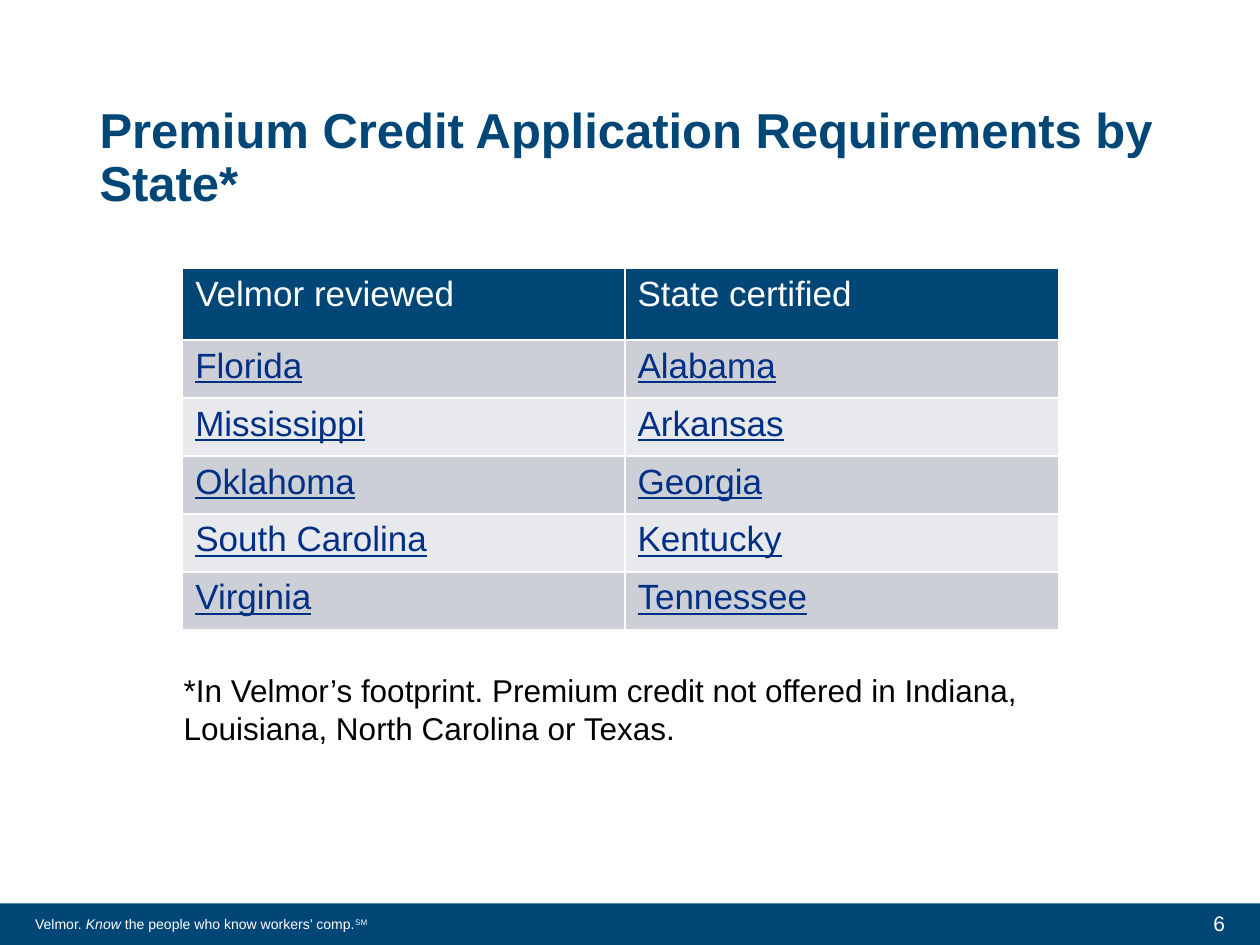
from pptx import Presentation
from pptx.dml.color import RGBColor as Rgb
from pptx.enum.shapes import MSO_SHAPE as Shape
from pptx.enum.text import MSO_ANCHOR as Anchor, PP_ALIGN as Align
from pptx.oxml import parse_xml
from pptx.oxml.ns import nsdecls
from pptx.util import Inches, Pt

HUES = {"navy": "004677", "link": "002F86", "white": "FFFFFF",
        "black": "000000", "dark": "CCCFD6", "light": "E7E9EC"}
ROWS = [("Velmor reviewed", "State certified"),
        ("Florida", "Alabama"),
        ("Mississippi", "Arkansas"),
        ("Oklahoma", "Georgia"),
        ("South Carolina", "Kentucky"),
        ("Virginia", "Tennessee")]


def hue(name):
    return Rgb.from_string(HUES[name])


def style(font, color, **form):
    font.color.rgb = hue(color)
    for key, val in {"name": "Arial", **form}.items():
        setattr(font, key, val)


def add_run(para, text, color, **form):
    run = para.add_run()
    run.text = text
    style(run.font, color, **form)
    return run


def add_box(slide, box, anchor=Anchor.TOP):
    frame = slide.shapes.add_textbox(*map(Inches, box)).text_frame
    frame.word_wrap = True
    frame.vertical_anchor = anchor
    return frame.paragraphs[0]


def add_rules(cell, color, width):
    props = cell._tc.get_or_add_tcPr()
    for num, side in enumerate(("lnL", "lnR", "lnT", "lnB")):
        # Borders must come before the fill
        props.insert(num, parse_xml(
            f'<a:{side} {nsdecls("a")} w="{Pt(width)}"><a:solidFill>'
            f'<a:srgbClr val="{HUES[color]}"/></a:solidFill></a:{side}>'))


def add_title(slide, box, text):
    title = slide.shapes.title
    for key, val in zip(("left", "top", "width", "height"), box):
        setattr(title, key, Inches(val))
    frame = title.text_frame
    frame.word_wrap = True
    frame.vertical_anchor = Anchor.MIDDLE
    para = frame.paragraphs[0]
    para.alignment = Align.LEFT
    para.line_spacing = 0.9
    add_run(para, text, "navy", size=Pt(28), bold=True)


def add_states(slide, box):
    shape = slide.shapes.add_table(len(ROWS), 2, *map(Inches, box))
    table = shape.table
    for col, width in zip(table.columns, (3.51, 3.44)):
        col.width = Inches(width)
    for num, texts in enumerate(ROWS):
        head = num == 0
        table.rows[num].height = Inches(0.57 if head else 0.46)
        fill = "navy" if head else ("light", "dark")[num % 2]
        for cell, text in zip(table.rows[num].cells, texts):
            cell.fill.solid()
            cell.fill.fore_color.rgb = hue(fill)
            add_rules(cell, "white", 1)
            add_run(cell.text_frame.paragraphs[0], text,
                    "white" if head else "link",
                    size=Pt(20), bold=False, underline=not head)


def add_note(slide, box, text):
    add_run(add_box(slide, box), text, "black", size=Pt(18))


def add_footer(slide, box):
    left, top, width, height = box
    band = slide.shapes.add_shape(Shape.RECTANGLE, *map(Inches, box))
    band.shadow.inherit = False
    band.fill.solid()
    band.fill.fore_color.rgb = hue("navy")
    band.line.fill.background()

    # Slogan with a raised service mark
    para = add_box(slide, (left + 0.18, top + 0.05, 3.47, 0.37))
    for text, slant in (("Velmor. ", False), ("Know", True),
                        (" the people who know workers’ comp.", False)):
        add_run(para, text, "white", size=Pt(8), italic=slant)
    mark = add_run(para, "SM", "white", size=Pt(8))
    mark.font._element.set("baseline", "30000")

    # Slide number
    para = add_box(slide, (left + width - 2.43, top - 0.04, 2.25, 0.4),
                   Anchor.MIDDLE)
    para.alignment = Align.RIGHT
    para.space_after = Pt(6)
    add_run(para, "6", "white", size=Pt(12))


def main():
    deck = Presentation()
    deck.slide_width, deck.slide_height = Inches(10), Inches(7.5)
    slide = deck.slides.add_slide(deck.slide_layouts[5])
    add_footer(slide, (0, 7.17, 10, 0.33))
    add_title(slide, (0.69, 0.54, 8.62, 1.45),
              "Premium Credit Application Requirements by State*")
    add_states(slide, (1.45, 2.13, 6.95, 2.87))
    add_note(slide, (1.36, 5.28, 7.04, 0.71),
             "*In Velmor’s footprint. Premium credit not offered in "
             "Indiana, Louisiana, North Carolina or Texas.")
    deck.save("out.pptx")


if __name__ == "__main__":
    main()
